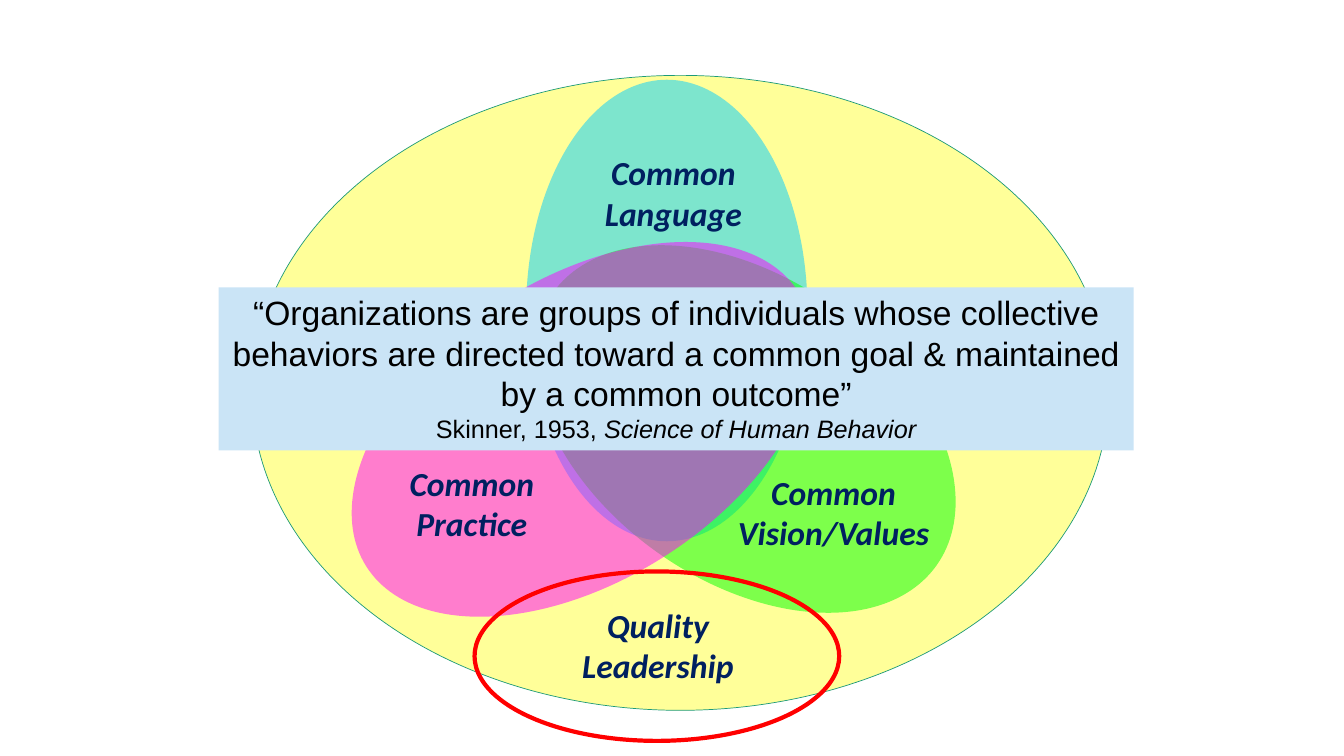
import pptx
import pptx.util
import pptx.dml.color
import pptx.enum.shapes
import pptx.enum.text
import lxml.etree
from pptx.oxml.ns import qn

Cm, Pt = pptx.util.Cm, pptx.util.Pt
SHAPE = pptx.enum.shapes.MSO_SHAPE
COLOURS = {
    "field": "FFFF99", "field edge": "1D9A78",
    "language": "00CCFF", "vision": "00FF00", "practice": "FF00FF",
    "label": "002060", "quote box": "CAE4F6", "quote": "000000",
    "highlight": "FF0000",
}


def rgb(name):
    return pptx.dml.color.RGBColor.from_string(COLOURS[name])


def write(holder, paragraphs, font="Calibri", size=24, colour="label", bold=False):
    """Each paragraph is a list of (text, italic) runs, with an optional size."""
    frame = holder.text_frame
    frame.word_wrap = True
    frame.vertical_anchor = pptx.enum.text.MSO_ANCHOR.TOP
    for number, runs in enumerate(paragraphs):
        paragraph = frame.add_paragraph() if number else frame.paragraphs[0]
        paragraph.alignment = pptx.enum.text.PP_ALIGN.CENTER
        for text, italic, *own_size in runs:
            run = paragraph.add_run()
            run.text = text
            run.font.name = font
            run.font.size = Pt(own_size[0] if own_size else size)
            run.font.bold = bold
            run.font.italic = italic
            run.font.color.rgb = rgb(colour)


deck = pptx.Presentation()
deck.slide_width, deck.slide_height = Cm(33.87), Cm(19.05)
shapes = deck.slides.add_slide(deck.slide_layouts[6]).shapes

# Yellow field around the whole diagram
field = shapes.add_shape(SHAPE.OVAL, Cm(6.35), Cm(1.9), Cm(21.59), Cm(16))
field.shadow.inherit = False
field.fill.solid()
field.fill.fore_color.rgb = rgb("field")
field.line.color.rgb = rgb("field edge")
field.line.width = Pt(0.5)

# Three overlapping translucent petals
for name, left, top, width, height, turn in [
    ("language", 13.26, 2.01, 7.09, 11.63, 0),
    ("vision", 14.96, 4.88, 7.62, 11.86, 305.4),
    ("practice", 10.87, 4.37, 7.62, 12.9, 57.6),
]:
    petal = shapes.add_shape(SHAPE.OVAL, Cm(left), Cm(top), Cm(width), Cm(height))
    petal.rotation = turn
    petal.shadow.inherit = False
    petal.fill.solid()
    petal.fill.fore_color.rgb = rgb(name)
    petal.line.fill.background()
    tint = petal.fill._xPr.find(".//" + qn("a:srgbClr"))
    lxml.etree.SubElement(tint, qn("a:alpha")).set("val", "51000")

# Labels
for lines, left, top, width in [
    (["Common Vision/Values"], 17.93, 11.76, 6.15),
    (["Common Language"], 14.53, 3.71, 4.88),
    (["Common Practice"], 9.25, 11.53, 5.28),
    (["Quality", "Leadership"], 12.45, 15.11, 8.26),
]:
    label = shapes.add_textbox(Cm(left), Cm(top), Cm(width), Cm(2.31))
    write(label, [[(line, True)] for line in lines], bold=True)

# Quotation across the middle
quote = shapes.add_shape(SHAPE.RECTANGLE, Cm(5.51), Cm(7.24), Cm(23.06), Cm(4.11))
quote.shadow.inherit = False
quote.fill.solid()
quote.fill.fore_color.rgb = rgb("quote box")
quote.line.fill.background()
write(quote, [
    [("“Organizations are groups of individuals whose collective behaviors are "
      "directed toward a common goal & maintained by a common outcome”", False)],
    [("Skinner, 1953, ", False, 18), ("Science of Human Behavior", True, 18)],
], font="Arial", colour="quote")

# Red ring around leadership
highlight = shapes.add_shape(SHAPE.OVAL, Cm(11.96), Cm(14.4), Cm(9.19), Cm(4.27))
highlight.shadow.inherit = False
highlight.fill.background()
highlight.line.color.rgb = rgb("highlight")
highlight.line.width = Pt(3)

deck.save("out.pptx")
